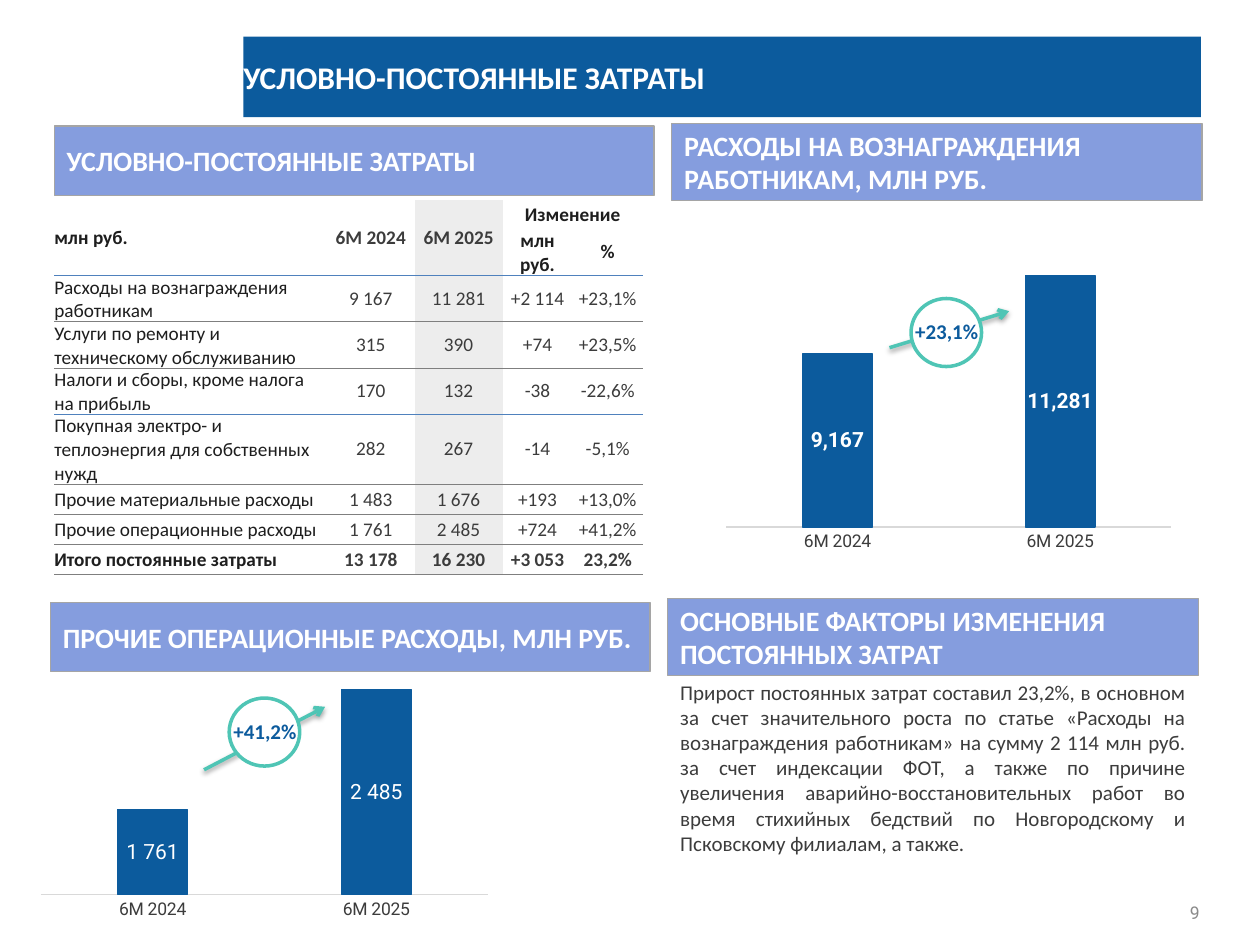
from lxml.etree import SubElement
from pptx import Presentation
from pptx.chart.data import CategoryChartData
from pptx.dml.color import RGBColor
from pptx.enum.chart import XL_CHART_TYPE, XL_LABEL_POSITION, XL_TICK_MARK
from pptx.enum.shapes import MSO_CONNECTOR, MSO_SHAPE
from pptx.enum.text import MSO_ANCHOR, MSO_AUTO_SIZE, PP_ALIGN
from pptx.oxml import parse_xml
from pptx.oxml.ns import nsdecls, qn
from pptx.util import Pt

NAVY = RGBColor(0x0C, 0x5B, 0x9D)
LILAC = RGBColor(0x85, 0x9D, 0xDE)
TEAL = RGBColor(0x4F, 0xC5, 0xB5)
BLUE = RGBColor(0x4F, 0x81, 0xBD)
WHITE = RGBColor(0xFF, 0xFF, 0xFF)
BLACK = RGBColor(0x1E, 0x1E, 0x1E)
DARK = RGBColor(0x3C, 0x3C, 0x3C)
GRAY = RGBColor(0x8A, 0x8A, 0x8A)
EDGE = RGBColor(0xA5, 0xA5, 0xA5)
RULE = RGBColor(0x7F, 0x7F, 0x7F)
PALE = RGBColor(0xED, 0xED, 0xED)
AXIS = RGBColor(0xD9, 0xD9, 0xD9)

PLAIN = "{2D5ABB26-0587-4C30-8999-92F81FD0307C}"  # table style without grid
COLS = [155.8, 50.2, 50.2, 40.1, 40.1]
ROWS = [16.5] + [26.3] * 4 + [40] + [17.2] * 3
HEAD = [["млн руб.", "6М 2024", "6М 2025", "Изменение", ""],
        ["", "", "", "млн руб.", "%"]]
BODY = [
    ["Расходы на вознаграждения работникам", "9 167", "11 281", "+2 114", "+23,1%"],
    ["Услуги по ремонту и техническому обслуживанию", "315", "390", "+74", "+23,5%"],
    ["Налоги и сборы, кроме налога на прибыль", "170", "132", "-38", "-22,6%"],
    ["Покупная электро- и теплоэнергия для собственных нужд", "282", "267", "-14", "-5,1%"],
    ["Прочие материальные расходы", "1 483", "1 676", "+193", "+13,0%"],
    ["Прочие операционные расходы", "1 761", "2 485", "+724", "+41,2%"],
    ["Итого постоянные затраты", "13 178", "16 230", "+3 053", "23,2%"],
]
BANNERS = [
    ("УСЛОВНО-ПОСТОЯННЫЕ ЗАТРАТЫ", (31, 72, 342.7, 39.6)),
    ("РАСХОДЫ НА ВОЗНАГРАЖДЕНИЯ РАБОТНИКАМ, МЛН РУБ.", (383.8, 70.6, 303.1, 43.9)),
    ("ПРОЧИЕ ОПЕРАЦИОННЫЕ РАСХОДЫ, МЛН РУБ.", (28.8, 344.2, 342.7, 39.6)),
    ("ОСНОВНЫЕ ФАКТОРЫ ИЗМЕНЕНИЯ ПОСТОЯННЫХ ЗАТРАТ", (381.6, 342, 303.1, 43.9)),
]
FACTORS = (
    "Прирост постоянных затрат составил 23,2%, в основном за счет значительного "
    "роста по статье «Расходы на вознаграждения работникам» на сумму 2 114 млн руб. "
    "за счет индексации ФОТ, а также по причине увеличения аварийно-восстановительных "
    "работ во время стихийных бедствий по Новгородскому и Псковскому филиалам, а также."
)


def points(box):
    return [Pt(v) for v in box]


def style(font, size, color, bold=False, name="Calibri"):
    font.name, font.size, font.bold = name, Pt(size), bold
    font.color.rgb = color


def write(frame, text, size, color, bold=False, align=PP_ALIGN.LEFT,
          name="Calibri", inset=True):
    frame.word_wrap = True
    if not inset:
        frame.margin_left = frame.margin_right = 0
        frame.margin_top = frame.margin_bottom = 0
    para = frame.paragraphs[0]
    para.text, para.alignment = text, align
    style(para.font, size, color, bold, name)
    return para


def add_title(slide, text, box):
    title = slide.shapes.title
    title.left, title.top, title.width, title.height = points(box)
    title.fill.solid()
    title.fill.fore_color.rgb = NAVY
    frame = title.text_frame
    frame.auto_size = MSO_AUTO_SIZE.NONE
    frame.vertical_anchor = MSO_ANCHOR.MIDDLE
    write(frame, text, 18, WHITE, True, inset=False)


def add_form(shapes, kind, box, fill, line, width):
    form = shapes.add_shape(kind, *points(box))
    form.shadow.inherit = False
    form.fill.solid()
    form.fill.fore_color.rgb = fill
    form.line.color.rgb = line
    form.line.width = Pt(width)
    return form


def add_banner(slide, text, box):
    form = add_form(slide.shapes, MSO_SHAPE.RECTANGLE, box, LILAC, EDGE, 0.75)
    form.text_frame.vertical_anchor = MSO_ANCHOR.MIDDLE
    write(form.text_frame, text, 16, WHITE, True)


def add_growth(slide, text, start, end, left, top):
    """Arrow with a ringed percentage on it."""
    shapes = slide.shapes.add_group_shape().shapes
    arrow = shapes.add_connector(MSO_CONNECTOR.STRAIGHT, *points(start + end))
    arrow.line.color.rgb = TEAL
    arrow.line.width = Pt(2)
    SubElement(arrow.line._get_or_add_ln(), qn("a:tailEnd"), type="arrow")
    arrow._element.spPr.append(parse_xml(
        f'<a:effectLst {nsdecls("a")}><a:outerShdw blurRad="{Pt(3.1)}" '
        f'dist="{Pt(1.6)}" dir="5400000" rotWithShape="0"><a:srgbClr val="000000">'
        '<a:alpha val="38000"/></a:srgbClr></a:outerShdw></a:effectLst>'))
    add_form(shapes, MSO_SHAPE.OVAL, (left, top, 40.3, 38.9), WHITE, TEAL, 2)
    label = shapes.add_textbox(*points((left - 5.2, top + 12, 51.1, 18)))
    para = write(label.text_frame, text, 12, NAVY, True, PP_ALIGN.CENTER)
    para.line_spacing = 0.7
    label.text_frame.word_wrap = False


def add_bars(slide, box, plot, values, low, high, labels=()):
    data = CategoryChartData(number_format="#,##0")
    data.categories = ["6М 2024", "6М 2025"]
    data.add_series("Series 1", values)
    chart = slide.shapes.add_chart(
        XL_CHART_TYPE.COLUMN_CLUSTERED, *points(box), data).chart
    chart.has_title = chart.has_legend = False
    style(chart.font, 10, DARK, name="Roboto")
    # Axes
    axis = chart.value_axis
    axis.minimum_scale, axis.maximum_scale = low, high
    axis.has_major_gridlines = axis.visible = False
    base = chart.category_axis
    base.major_tick_mark = XL_TICK_MARK.NONE
    base.format.line.color.rgb = AXIS
    base.format.line.width = Pt(0.75)
    style(base.tick_labels.font, 10, DARK, name="Roboto")
    # Columns and their labels
    bars = chart.plots[0]
    bars.gap_width, bars.vary_by_categories = 219, False
    series = bars.series[0]
    series.format.fill.solid()
    series.format.fill.fore_color.rgb = NAVY
    series.format.line.color.rgb = NAVY
    series.format.line.width = Pt(0.75)
    marks = series.data_labels
    marks.show_value, marks.position = True, XL_LABEL_POSITION.CENTER
    marks.number_format, marks.number_format_is_linked = "#,##0", False
    style(marks.font, 12, WHITE, True, "Roboto")
    for i, text in enumerate(labels):
        mark = series.points[i].data_label
        para = mark.text_frame.paragraphs[0]
        para.text = text
        style(para.font, 12, WHITE, name="Roboto")
        mark.position = XL_LABEL_POSITION.CENTER
    # Fixed plot area
    area = chart._chartSpace.chart.plotArea
    for old in area.findall(qn("c:layout")):
        area.remove(old)
    sides = "".join(f'<c:{k} val="{v}"/>' for k, v in zip("xywh", plot))
    area.insert(0, parse_xml(
        f'<c:layout {nsdecls("c")}><c:manualLayout><c:layoutTarget val="inner"/>'
        f'<c:xMode val="edge"/><c:yMode val="edge"/>{sides}'
        '</c:manualLayout></c:layout>'))


def add_rule(cell, side, color, width):
    cell._tc.get_or_add_tcPr().insert(0, parse_xml(
        f'<a:{side} {nsdecls("a")} w="{Pt(width)}"><a:solidFill>'
        f'<a:srgbClr val="{color}"/></a:solidFill></a:{side}>'))


def add_costs(slide, left, top):
    rows = HEAD + BODY
    table = slide.shapes.add_table(
        len(rows), len(COLS), *points((left, top, sum(COLS), sum(ROWS)))).table
    table.first_row = table.horz_banding = False
    table._tbl.tblPr.find(qn("a:tableStyleId")).text = PLAIN
    for col, width in zip(table.columns, COLS):
        col.width = Pt(width)
    for r, texts in enumerate(rows):
        table.rows[r].height = Pt(ROWS[r])
        for c, text in enumerate(texts):
            cell = table.cell(r, c)
            cell.vertical_anchor = MSO_ANCHOR.MIDDLE
            cell.margin_left = cell.margin_right = 0
            cell.margin_top = cell.margin_bottom = 0
            write(cell.text_frame, text, 11,
                  DARK if c in (1, 2) or (c and r > 1) else BLACK,
                  r < 2 or r == len(rows) - 1,
                  PP_ALIGN.CENTER if c else PP_ALIGN.LEFT)
            if c == 2:
                cell.fill.solid()
                cell.fill.fore_color.rgb = PALE
            else:
                cell.fill.background()
            # Blue rules close the header and the third body row
            if r in (1, 4) or (r == 0 and c < 3):
                add_rule(cell, "lnB", BLUE, 1)
            elif r:
                add_rule(cell, "lnB", RULE, 0.5)
            if r in (2, 5):
                add_rule(cell, "lnT", BLUE, 1)
    for c in range(3):
        table.cell(0, c).merge(table.cell(1, c))
    table.cell(0, 3).merge(table.cell(0, 4))


def main():
    deck = Presentation()
    deck.slide_width, deck.slide_height = Pt(720), Pt(540)
    slide = deck.slides.add_slide(deck.slide_layouts[5])
    add_title(slide, "УСЛОВНО-ПОСТОЯННЫЕ ЗАТРАТЫ", (139, 20.9, 547.2, 46.1))

    # Page number
    page = slide.shapes.add_textbox(*points((654.5, 514.8, 31, 13))).text_frame
    page.vertical_anchor = MSO_ANCHOR.MIDDLE
    write(page, "9", 10, GRAY, align=PP_ALIGN.RIGHT, name="Roboto", inset=False)

    # Staff pay
    add_bars(slide, (409.7, 128.9, 265, 191.5), (0.02, 0.07, 0.96, 0.83),
             (9167, 11281), 4500, 12000)
    add_growth(slide, "+23,1%", (508.3, 198.7), (576.7, 177.8), 520.6, 170.6)

    # Cost table, commentary and section banners
    add_costs(slide, 31, 114.5)
    note = slide.shapes.add_textbox(*points((381.6, 384.5, 303.1, 108.7)))
    write(note.text_frame, FACTORS, 12, DARK, align=PP_ALIGN.JUSTIFY)
    for text, box in BANNERS:
        add_banner(slide, text, box)

    # Other operating costs
    add_bars(slide, (12.2, 356.4, 277.9, 180), (0.04, 0.15, 0.92, 0.71),
             (1281, 2250), 600, 2400, ("1 761", "2 485"))
    add_growth(slide, "+41,2%", (116.6, 439.9), (185.8, 403.9), 131, 398.9)
    deck.save("out.pptx")


if __name__ == "__main__":
    main()
